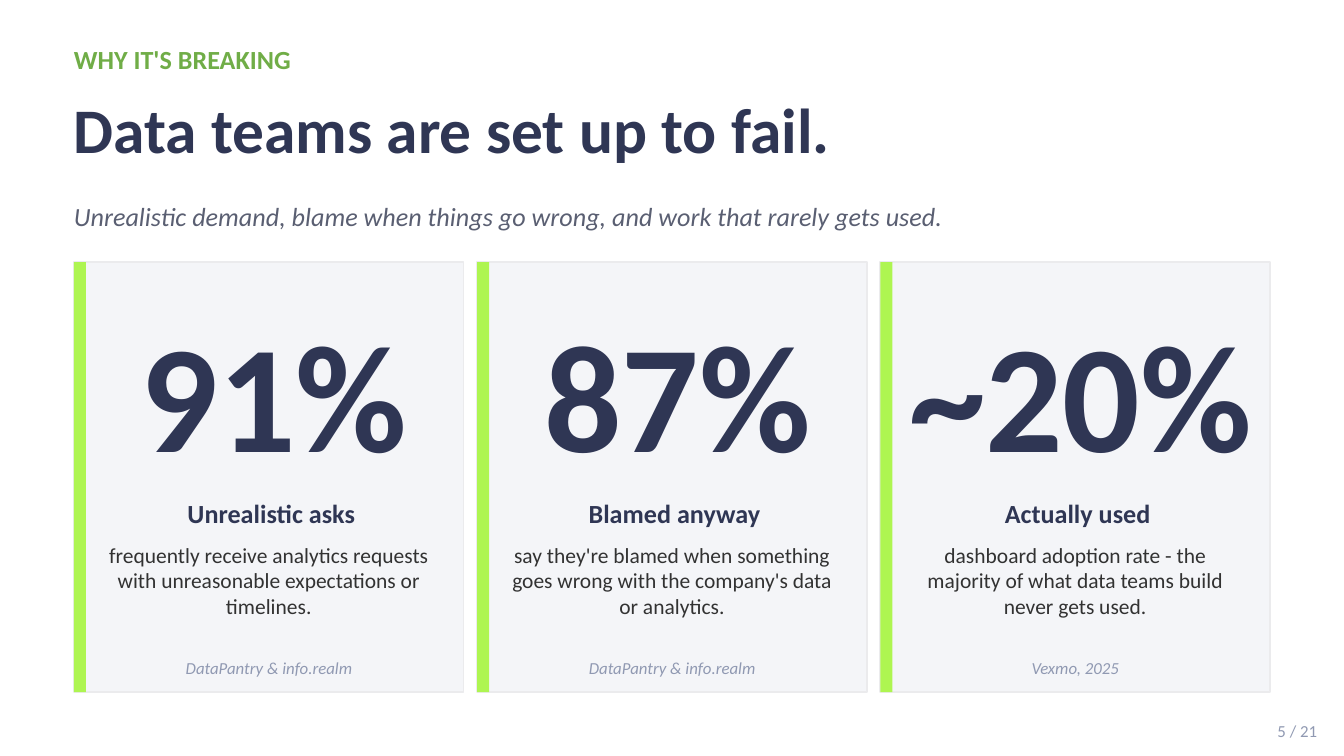
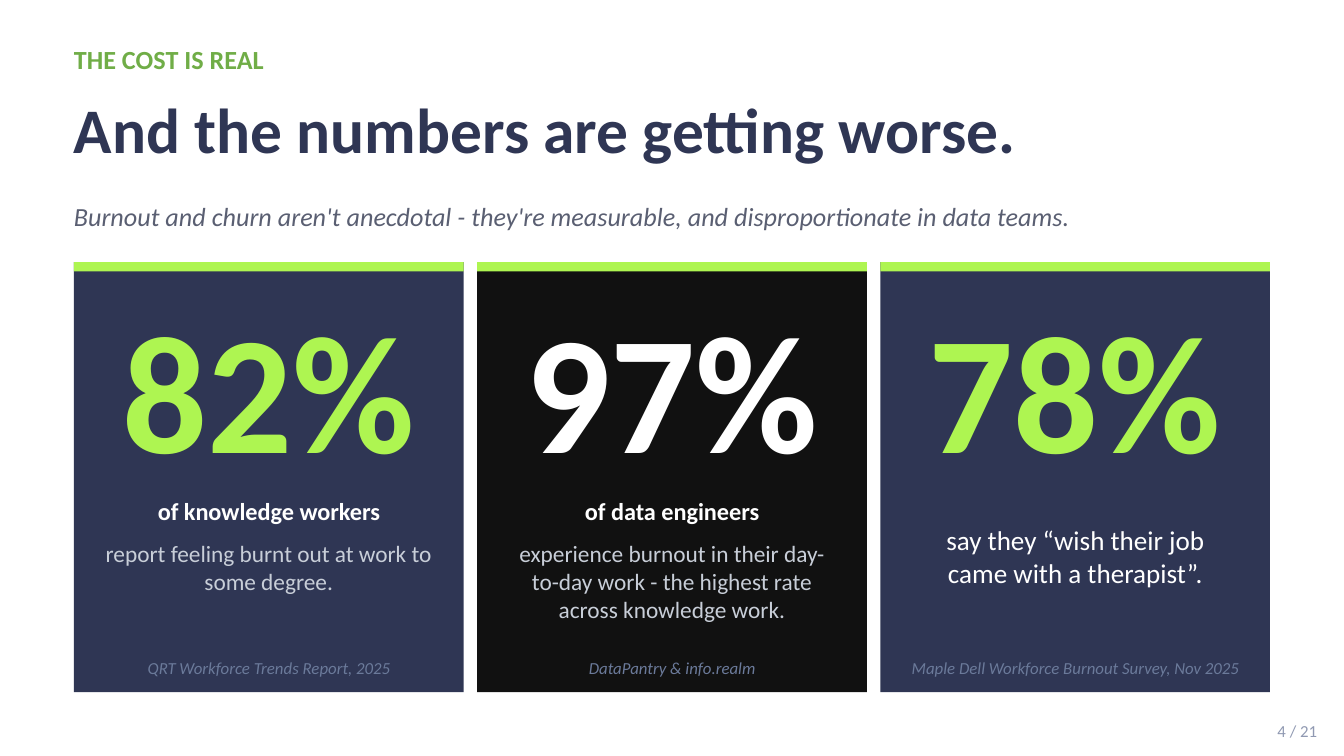
from pptx import Presentation
from pptx.dml.color import RGBColor
from pptx.enum.shapes import MSO_SHAPE
from pptx.enum.text import MSO_ANCHOR as Anchor, PP_ALIGN as Align
from pptx.util import Pt

FONT = "Calibri"
WHITE = RGBColor(0xFF, 0xFF, 0xFF)
BLACK = RGBColor(0x11, 0x11, 0x11)
NAVY = RGBColor(0x2F, 0x36, 0x54)
LIME = RGBColor(0xAE, 0xF5, 0x51)
GREEN = RGBColor(0x70, 0xAD, 0x47)
SLATE = RGBColor(0x5A, 0x5F, 0x72)
CHARCOAL = RGBColor(0x32, 0x32, 0x32)
CARD_GRAY = RGBColor(0xF4, 0xF5, 0xF8)
BORDER_GRAY = RGBColor(0xEB, 0xEB, 0xED)
MUTED = RGBColor(0x90, 0x99, 0xB2)
MUTED_DARK = RGBColor(0x6B, 0x7A, 0x9A)
PALE = RGBColor(0xC8, 0xCE, 0xD8)

MARGIN = 39.6
CARD_TOP = 140.4
CARD_WIDTH = 208.8
CARD_HEIGHT = 230.4
CARD_STEP = 216


def add_text(slide, text, left, top, width, height, size, color,
             bold=False, italic=False, align=Align.CENTER, anchor=Anchor.MIDDLE):
    box = slide.shapes.add_textbox(Pt(left), Pt(top), Pt(width), Pt(height))
    frame = box.text_frame
    frame.word_wrap = True
    frame.vertical_anchor = anchor
    frame.margin_left = frame.margin_right = 0
    frame.margin_top = frame.margin_bottom = 0
    frame.text = text
    for paragraph in frame.paragraphs:
        paragraph.alignment = align
        font = paragraph.font
        font.name = FONT
        font.size = Pt(size)
        font.bold = bold
        font.italic = italic
        font.color.rgb = color


def add_rectangle(slide, left, top, width, height, fill, line=None):
    shape = slide.shapes.add_shape(
        MSO_SHAPE.RECTANGLE, Pt(left), Pt(top), Pt(width), Pt(height))
    shape.shadow.inherit = False
    shape.fill.solid()
    shape.fill.fore_color.rgb = fill
    if line is None:
        shape.line.fill.background()
    else:
        shape.line.color.rgb = line
        shape.line.width = Pt(1)


presentation = Presentation()
presentation.slide_width = Pt(720)
presentation.slide_height = Pt(405)

headings = [
    ("WHY IT'S BREAKING", "Data teams are set up to fail.",
     "Unrealistic demand, blame when things go wrong, and work that rarely gets used.",
     "5 / 21"),
    ("THE COST IS REAL", "And the numbers are getting worse.",
     "Burnout and churn aren't anecdotal - they're measurable, and disproportionate in data teams.",
     "4 / 21"),
]
slides = []
for kicker, title, subtitle, page in headings:
    slide = presentation.slides.add_slide(presentation.slide_layouts[6])
    slide.background.fill.solid()
    slide.background.fill.fore_color.rgb = WHITE
    add_text(slide, kicker, MARGIN, 21.6, 360, 20.2, 14, GREEN, bold=True, align=Align.LEFT)
    add_text(slide, title, MARGIN, 41.8, 648, 54, 34, NAVY, bold=True, align=Align.LEFT)
    add_text(slide, subtitle, MARGIN, 102.2, 648, 27.4, 14, SLATE, italic=True, align=Align.LEFT)
    add_text(slide, page, 655.2, 383.8, 50.4, 15.8, 9, MUTED, align=Align.RIGHT)
    slides.append(slide)
causes_slide, costs_slide = slides

causes = [
    ("91%", "Unrealistic asks",
     "frequently receive analytics requests with unreasonable expectations or timelines.",
     "DataPantry & info.realm"),
    ("87%", "Blamed anyway",
     "say they're blamed when something goes wrong with the company's data or analytics.",
     "DataPantry & info.realm"),
    ("~20%", "Actually used",
     "dashboard adoption rate - the majority of what data teams build never gets used.",
     "Vexmo, 2025"),
]
for index, (number, label, body, source) in enumerate(causes):
    left = MARGIN + index * CARD_STEP
    add_rectangle(causes_slide, left, CARD_TOP, CARD_WIDTH, CARD_HEIGHT, CARD_GRAY, BORDER_GRAY)
    add_rectangle(causes_slide, left, CARD_TOP, 6.5, CARD_HEIGHT, LIME)
    add_text(causes_slide, number, left + 13, 162, 188.6, 95, 82, NAVY, bold=True)
    add_text(causes_slide, label, left + 15.8, 262.8, 180, 24.5, 14, NAVY, bold=True)
    add_text(causes_slide, body, left + 18, 290.2, 172.8, 59, 11.5, CHARCOAL, anchor=Anchor.TOP)
    add_text(causes_slide, source, left + 13, 347.8, 182.9, 20.2, 9, MUTED, italic=True)

costs = [
    ("82%", NAVY, LIME, "of knowledge workers",
     "report feeling burnt out at work to some degree.",
     "QRT Workforce Trends Report, 2025"),
    ("97%", BLACK, WHITE, "of data engineers",
     "experience burnout in their day-to-day work - the highest rate across knowledge work.",
     "DataPantry & info.realm"),
    ("78%", NAVY, LIME, None,
     "say they “wish their job\ncame with a therapist”.",
     "Maple Dell Workforce Burnout Survey, Nov 2025"),
]
for index, (number, fill, number_color, label, body, source) in enumerate(costs):
    left = MARGIN + index * CARD_STEP
    add_rectangle(costs_slide, left, CARD_TOP, CARD_WIDTH, CARD_HEIGHT, fill)
    add_rectangle(costs_slide, left, CARD_TOP, CARD_WIDTH, 5, LIME)
    add_text(costs_slide, number, left + 7.2, 158.4, 194.4, 97.2, 90, number_color, bold=True)
    if label:
        add_text(costs_slide, label, left + 13, 261.4, 182.9, 24.5, 13, WHITE, bold=True)
        add_text(costs_slide, body, left + 15.8, 288.7, 177.1, 59, 12.5, PALE, anchor=Anchor.TOP)
    else:
        add_text(costs_slide, body, left + 13, 285.8, 182.9, 24.5, 14.5, WHITE)
    add_text(costs_slide, source, left + 13, 347.8, 182.9, 20.2, 9, MUTED_DARK, italic=True)

presentation.save("out.pptx")
